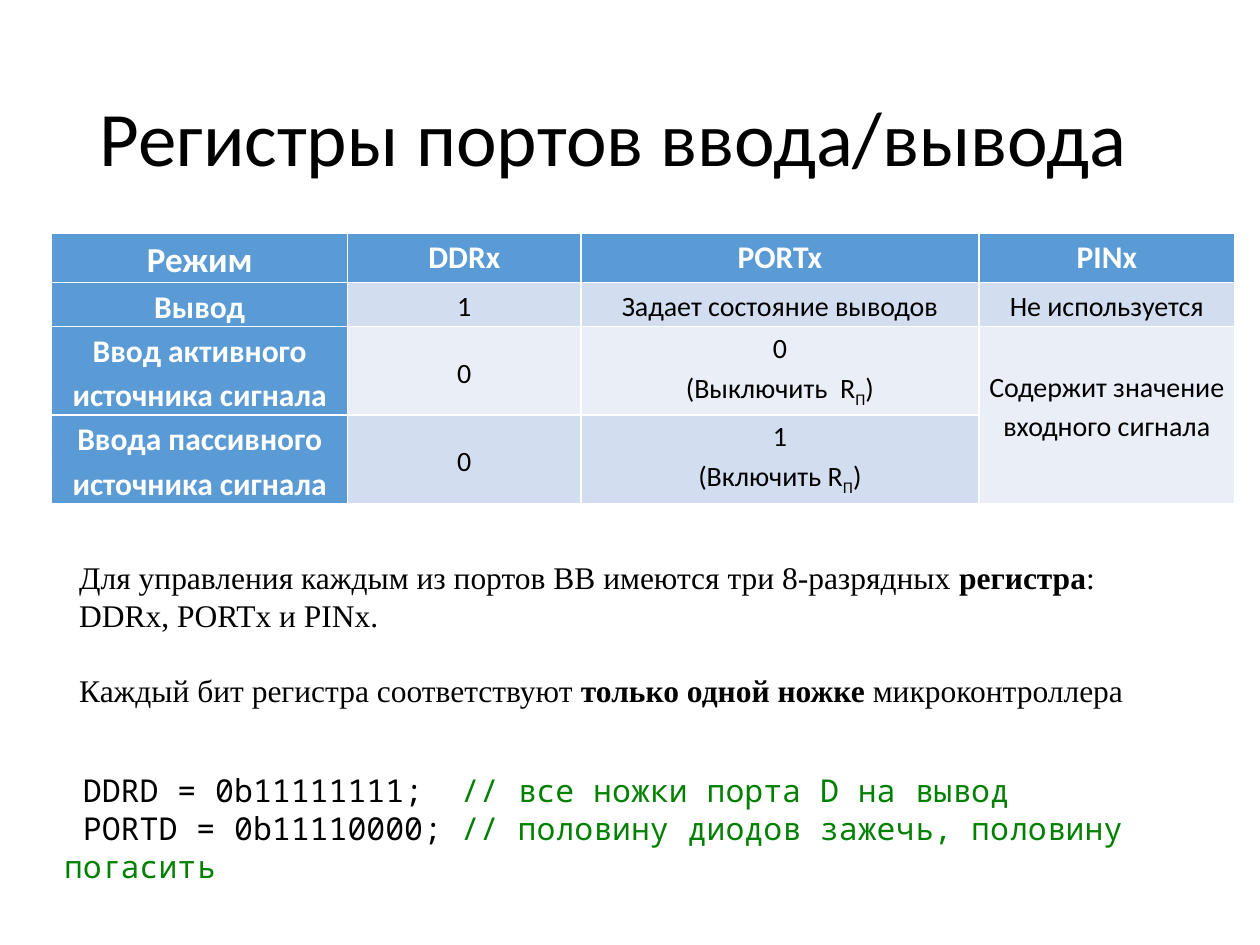
from pptx import Presentation
from pptx.dml.color import RGBColor
from pptx.enum.text import MSO_ANCHOR, MSO_AUTO_SIZE, PP_ALIGN
from pptx.util import Inches, Pt


def color(value):
    return RGBColor.from_string(value)


def add_run(paragraph, text, size, font="Calibri", fill="000000", bold=False):
    run = paragraph.add_run()
    run.text = text
    run.font.size = Pt(size)
    run.font.name = font
    run.font.bold = bold
    run.font.color.rgb = color(fill)
    return run


presentation = Presentation()
presentation.slide_width = Inches(10)
presentation.slide_height = Inches(7.5)
slide = presentation.slides.add_slide(presentation.slide_layouts[5])

# Title
title = slide.shapes.title
title.left, title.top = Inches(0.69), Inches(0.4)
title.width, title.height = Inches(8.62), Inches(1.45)
title.text_frame.auto_size = MSO_AUTO_SIZE.NONE
title.text_frame.vertical_anchor = MSO_ANCHOR.MIDDLE
paragraph = title.text_frame.paragraphs[0]
paragraph.alignment = PP_ALIGN.LEFT
paragraph.line_spacing = 0.9
add_run(paragraph, "Регистры портов ввода/вывода", 44)

# Register table: a cell is a list of paragraphs, "_" starts a subscript letter
rows = [
    [["Режим"], ["DDRx"], ["PORTx"], ["PINx"]],
    [["Вывод"], ["1"], ["Задает состояние выводов"], ["Не используется"]],
    [["Ввод активного источника сигнала"], ["0"], ["0", "(Выключить  R_П)"],
     ["Содержит значение входного сигнала"]],
    [["Ввода пассивного источника сигнала"], ["0"], ["1", "(Включить R_П)"], []],
]
column_widths = [2.35, 1.85, 3.16, 2.03]
row_heights = [0.39, 0.35, 0.69, 0.69]
band_fills = ["5B9BD5", "D2DEEF", "EAEFF7", "D2DEEF"]

table = slide.shapes.add_table(
    4, 4, Inches(0.41), Inches(1.85), Inches(9.39), Inches(2.12)).table
table.first_col = True
for column, width in zip(table.columns, column_widths):
    column.width = Inches(width)
for row, height in zip(table.rows, row_heights):
    row.height = Inches(height)

for row_index, row in enumerate(rows):
    for column_index, lines in enumerate(row):
        cell = table.cell(row_index, column_index)
        is_header = row_index == 0 or column_index == 0
        cell.fill.solid()
        cell.fill.fore_color.rgb = color("5B9BD5" if is_header else band_fills[row_index])
        cell.margin_left = cell.margin_right = Inches(0.07)
        cell.margin_top = cell.margin_bottom = 0
        top_anchored = row_index == 0 or (row_index > 1 and column_index > 1)
        cell.vertical_anchor = MSO_ANCHOR.TOP if top_anchored else MSO_ANCHOR.MIDDLE
        size = 18 if is_header else 16
        if row_index == column_index == 0:
            size = 20
        for line_index, line in enumerate(lines):
            frame = cell.text_frame
            paragraph = frame.add_paragraph() if line_index else frame.paragraphs[0]
            paragraph.alignment = PP_ALIGN.CENTER
            paragraph.line_spacing = 1.15
            style = dict(size=size, fill="FFFFFF" if is_header else "000000", bold=is_header)
            base, _, rest = line.partition("_")
            add_run(paragraph, base, **style)
            if rest:
                subscript = add_run(paragraph, rest[0], **style)
                subscript._r.get_or_add_rPr().set("baseline", "-25000")
                add_run(paragraph, rest[1:], **style)

input_value_cell = table.cell(2, 3)
input_value_cell.merge(table.cell(3, 3))
input_value_cell.margin_top = Inches(0.31)

# Explanation and code: each run is (text, colour, bold)
explanation = [
    [("Для управления каждым из портов ВВ имеются три 8-разрядных ", "000000", False),
     ("регистра", "000000", True),
     (": DDRx, PORTx и PINx.", "000000", False)],
    [("Каждый бит регистра соответствуют ", "000000", False),
     ("только одной ножке ", "000000", True),
     ("микроконтроллера", "000000", False)],
]
code = [
    [(" DDRD = 0b11111111;  ", "000000", False),
     ("// все ножки порта D на вывод", "008000", False)],
    [(" PORTD = 0b11110000; ", "000000", False),
     ("// половину диодов зажечь, половину погасить", "008000", False)],
]
text_boxes = [
    (0.53, 4.38, 8.78, 1.31, "Times New Roman", 21.5, explanation),
    (0.41, 6.07, 9.19, 0.71, "Noto Sans Mono", 0, code),
]
for left, top, width, height, font, gap, paragraphs in text_boxes:
    box = slide.shapes.add_textbox(Inches(left), Inches(top), Inches(width), Inches(height))
    frame = box.text_frame
    frame.word_wrap = True
    frame.auto_size = MSO_AUTO_SIZE.SHAPE_TO_FIT_TEXT
    for index, runs in enumerate(paragraphs):
        paragraph = frame.add_paragraph() if index else frame.paragraphs[0]
        if index:
            paragraph.space_before = Pt(gap)
        for text, fill, bold in runs:
            add_run(paragraph, text, 18, font, fill, bold)

presentation.save("out.pptx")
